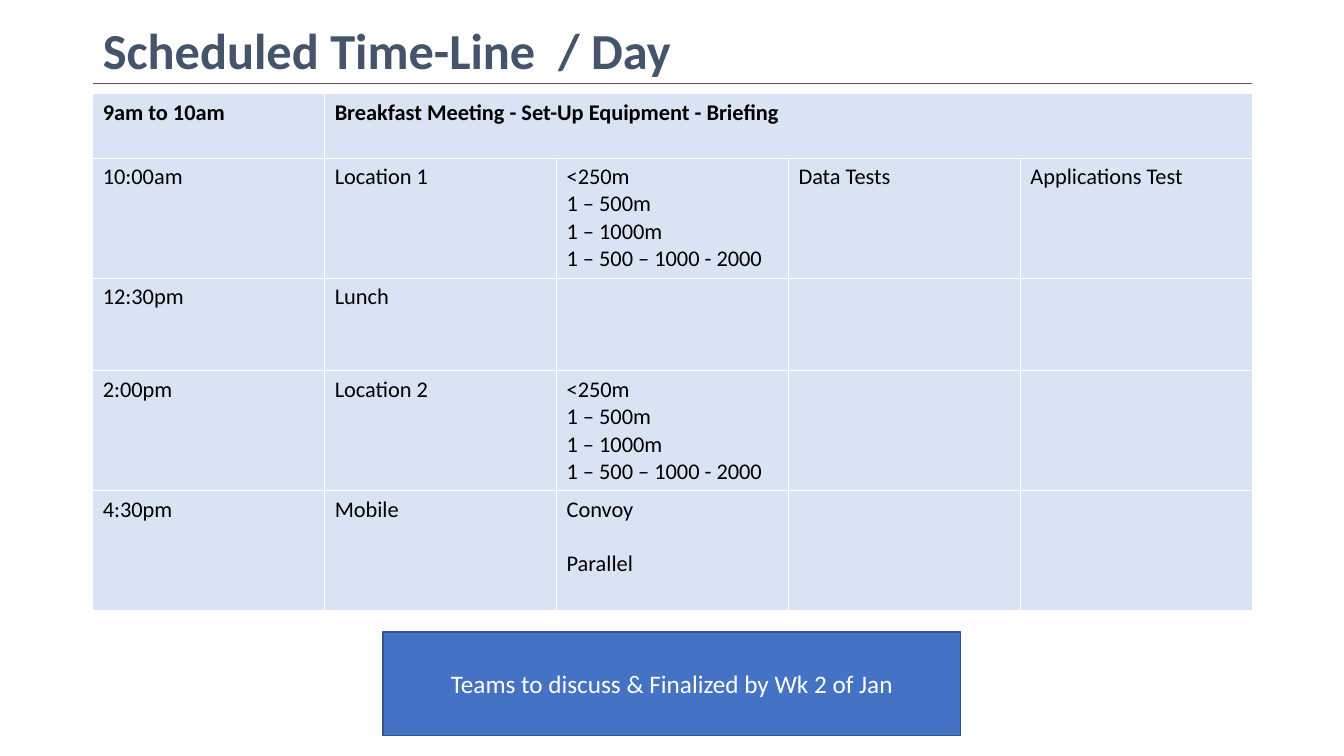
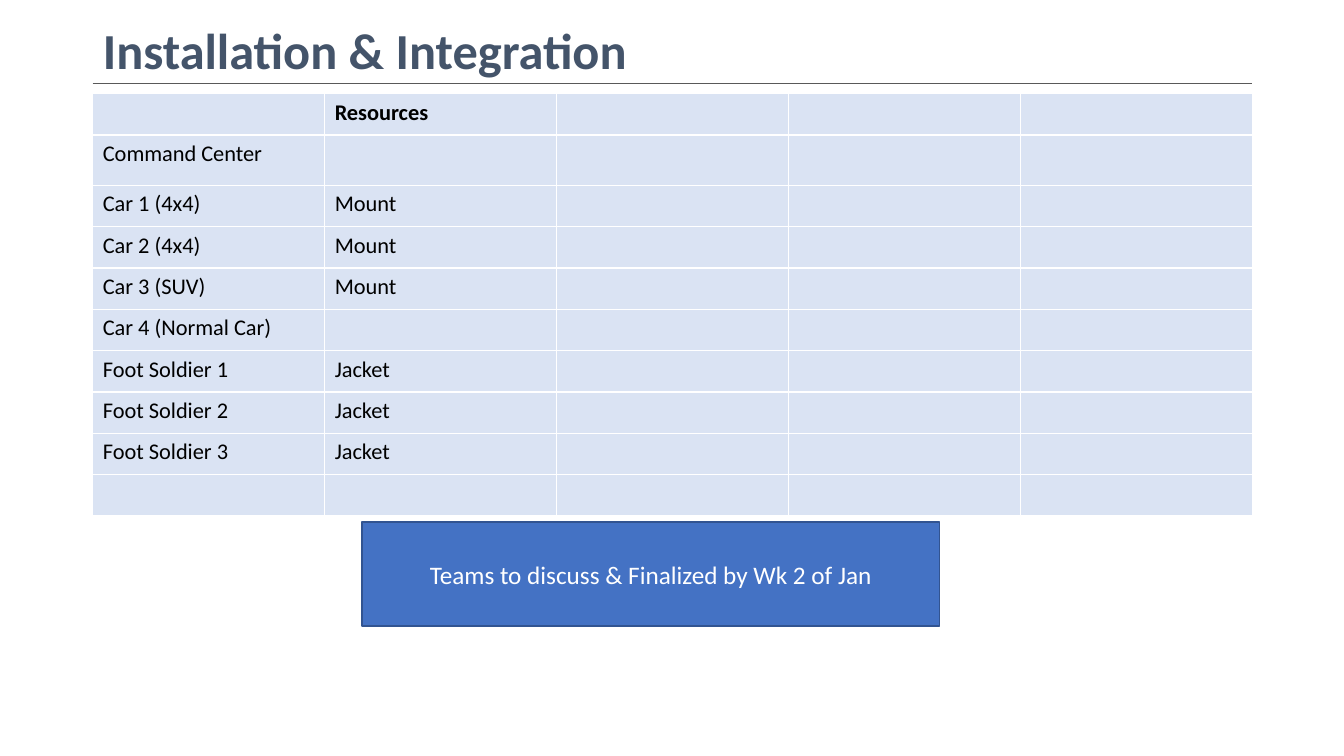
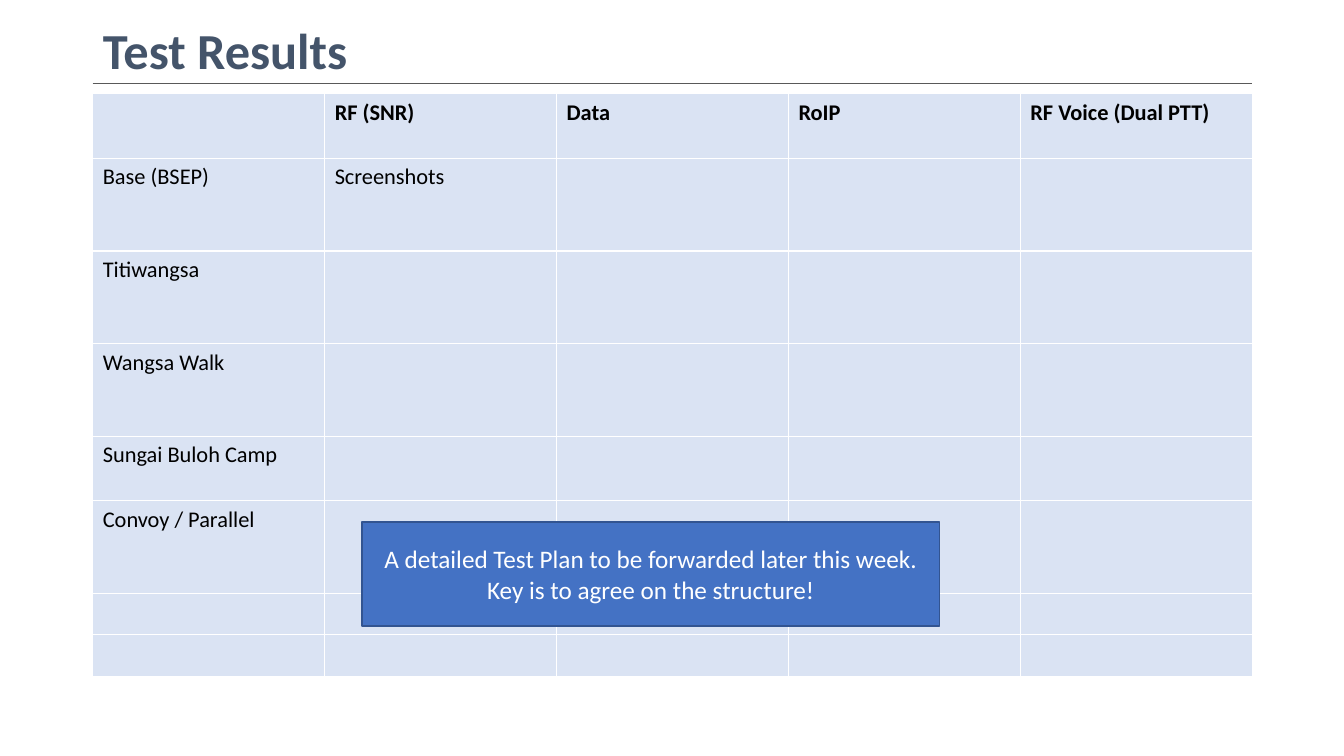
from pptx import Presentation
from pptx import util as u
from pptx.dml.color import RGBColor
from pptx.enum import shapes, text
from pptx.oxml.ns import qn
from lxml import etree

# Shared grid, in inches
LEFT, COL, COLS = 0.92, 2.3, 5
WIDTH = COL * COLS
TITLE_TOP, TITLE_H = 0.2, 0.66
RULE, TOP = 0.83, 0.93
BOX_W, BOX_H = 5.73, 1.03

# Shared colours
INK, SLATE, GREY = "000000", "44546A", "595959"
PALE, BLUE, NAVY, WHITE = "DAE3F3", "4472C4", "325491", "FFFFFF"


def rgb(code):
    return RGBColor.from_string(code)


def style(para, size, color, bold=False):
    font = para.font
    font.name, font.size, font.bold = "Calibri", u.Pt(size), bold
    font.color.rgb = rgb(color)


# Row heights: one line, one tall line, two, three and four lines
ONE, TALL, TWO, THREE, FOUR = 0.41, 0.5, 0.64, 0.92, 1.19
RANGE = "<250m\n1 – 500m\n1 – 1000m\n1 – 500 – 1000 - 2000"
TEAMS = "Teams to discuss & Finalized by Wk 2 of Jan"

# Each slide: title, rows (height, then cells), note and its left and top
pages = [
    ("Scheduled Time-Line  / Day", [
        (TWO, "9am to 10am", "Breakfast Meeting - Set-Up Equipment - Briefing"),
        (FOUR, "10:00am", "Location 1", RANGE, "Data Tests", "Applications Test"),
        (THREE, "12:30pm", "Lunch"),
        (FOUR, "2:00pm", "Location 2", RANGE),
        (FOUR, "4:30pm", "Mobile", "Convoy\nParallel"),
    ], TEAMS, 3.8, 6.27),
    ("Installation & Integration", [
        (ONE, "", "Resources"),
        (TALL, "Command Center"),
        (ONE, "Car 1 (4x4)", "Mount"),
        (ONE, "Car 2 (4x4)", "Mount"),
        (ONE, "Car 3 (SUV)", "Mount"),
        (ONE, "Car 4 (Normal Car)"),
        (ONE, "Foot Soldier 1", "Jacket"),
        (ONE, "Foot Soldier 2", "Jacket"),
        (ONE, "Foot Soldier 3", "Jacket"),
        (ONE,),
    ], TEAMS, 3.59, 5.18),
    ("Test Results", [
        (TWO, "", "RF (SNR)", "Data", "RoIP", "RF Voice (Dual PTT)"),
        (THREE, "Base (BSEP)", "Screenshots"),
        (THREE, "Titiwangsa"),
        (THREE, "Wangsa Walk"),
        (TWO, "Sungai Buloh Camp"),
        (THREE, "Convoy / Parallel"),
        (ONE,),
        (ONE,),
    ], "A detailed Test Plan to be forwarded later this week.\n"
       "Key is to agree on the structure!", 3.59, 5.18),
]

deck = Presentation()
deck.slide_width, deck.slide_height = u.Inches(13.33), u.Inches(7.5)

for name, rows, note, left, top in pages:
    slide = deck.slides.add_slide(deck.slide_layouts[5])

    # Title
    title = slide.shapes.title
    title.left, title.top = u.Inches(LEFT), u.Inches(TITLE_TOP)
    title.width, title.height = u.Inches(WIDTH), u.Inches(TITLE_H)
    frame = title.text_frame
    frame.text = name
    frame.vertical_anchor = text.MSO_ANCHOR.MIDDLE
    frame.auto_size = text.MSO_AUTO_SIZE.NONE
    para = frame.paragraphs[0]
    para.alignment, para.line_spacing = text.PP_ALIGN.LEFT, 0.9
    style(para, 36, SLATE, True)

    # Table
    high = sum(row[0] for row in rows)
    table = slide.shapes.add_table(
        len(rows), COLS, u.Inches(LEFT), u.Inches(TOP),
        u.Inches(WIDTH), u.Inches(high)).table
    table.horz_banding = False
    for col in table.columns:
        col.width = u.Inches(COL)
    for r, (tall, *words) in enumerate(rows):
        table.rows[r].height = u.Inches(tall)
        for c in range(COLS):
            cell = table.cell(r, c)
            cell.fill.solid()
            cell.fill.fore_color.rgb = rgb(PALE)
            if c < len(words):
                cell.text = words[c]
            for para in cell.text_frame.paragraphs:
                style(para, 16, INK, r == 0)
                if para.text == "Parallel":
                    para.space_before = u.Pt(19.5)
    if name.startswith("Scheduled"):
        table.cell(0, 1).merge(table.cell(0, COLS - 1))

    # Rule below the title
    rule = slide.shapes.add_connector(
        shapes.MSO_CONNECTOR.STRAIGHT, u.Inches(LEFT), u.Inches(RULE),
        u.Inches(LEFT + WIDTH), u.Inches(RULE))
    rule.line.color.rgb, rule.line.width = rgb(GREY), u.Pt(0.5)
    etree.SubElement(rule._element.spPr, qn("a:effectLst"))

    # Note box
    box = slide.shapes.add_shape(
        shapes.MSO_SHAPE.RECTANGLE, u.Inches(left), u.Inches(top),
        u.Inches(BOX_W), u.Inches(BOX_H))
    box.shadow.inherit = False
    box.fill.solid()
    box.fill.fore_color.rgb = rgb(BLUE)
    box.line.color.rgb, box.line.width = rgb(NAVY), u.Pt(1)
    frame = box.text_frame
    frame.text, frame.word_wrap = note, True
    frame.vertical_anchor = text.MSO_ANCHOR.MIDDLE
    for para in frame.paragraphs:
        para.alignment = text.PP_ALIGN.CENTER
        style(para, 18, WHITE)

deck.save("out.pptx")
